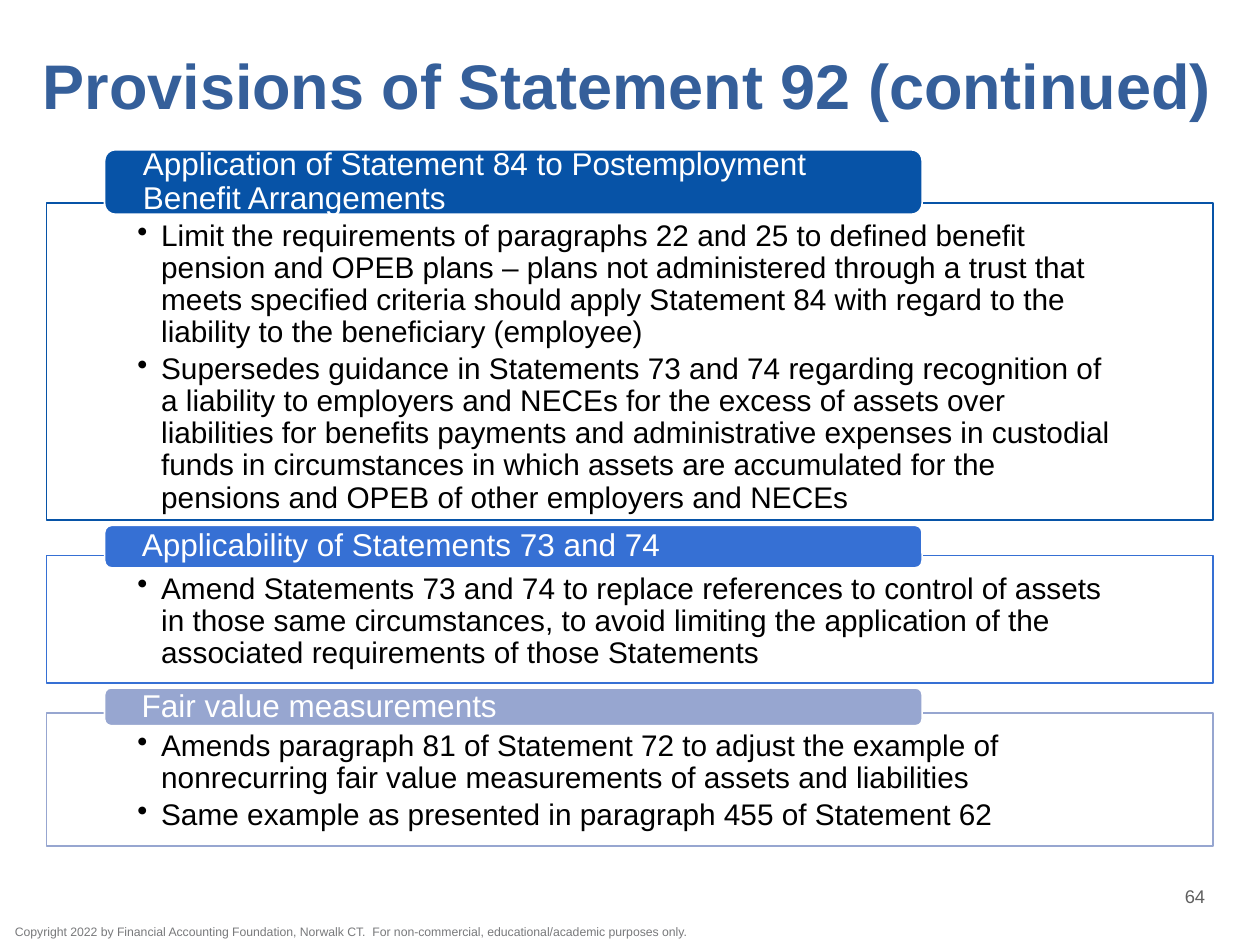
from dataclasses import dataclass

from lxml import etree
from pptx import Presentation
from pptx import util as u
from pptx.dml.color import RGBColor
from pptx.enum import shapes, text
from pptx.oxml import ns

FONT = "Arial"
WHITE = RGBColor(0xFF, 0xFF, 0xFF)
BLACK = RGBColor(0x00, 0x00, 0x00)
TITLE_BLUE = RGBColor(0x35, 0x5F, 0x9A)
DEEP_BLUE = RGBColor(0x07, 0x53, 0xA7)
MID_BLUE = RGBColor(0x36, 0x70, 0xD4)
PALE_BLUE = RGBColor(0x97, 0xA6, 0xD0)
NUMBER_GREY = RGBColor(0x5F, 0x5F, 0x5F)
COPYRIGHT_GREY = RGBColor(0x78, 0x79, 0x7B)

PANEL_LEFT, PANEL_WIDTH = 0.94, 23.52
HEADER_LEFT, HEADER_WIDTH = 2.11, 16.48


@dataclass
class Section:
    heading: str
    points: list[str]
    color: RGBColor
    header_top: float
    header_height: float
    panel_top: float
    panel_height: float


SECTIONS = [
    Section(
        "Application of Statement 84 to Postemployment Benefit Arrangements",
        [
            "Limit the requirements of paragraphs 22 and 25 to defined benefit pension "
            "and OPEB plans – plans not administered through a trust that meets specified "
            "criteria should apply Statement 84 with regard to the liability to the "
            "beneficiary (employee)",
            "Supersedes guidance in Statements 73 and 74 regarding recognition of a "
            "liability to employers and NECEs for the excess of assets over liabilities "
            "for benefits payments and administrative expenses in custodial funds in "
            "circumstances in which assets are accumulated for the pensions and OPEB of "
            "other employers and NECEs",
        ],
        DEEP_BLUE, 3.02, 1.3, 4.09, 6.4,
    ),
    Section(
        "Applicability of Statements 73 and 74",
        [
            "Amend Statements 73 and 74 to replace references to control of assets in "
            "those same circumstances, to avoid limiting the application of the "
            "associated requirements of those Statements",
        ],
        MID_BLUE, 10.59, 0.86, 11.2, 2.57,
    ),
    Section(
        "Fair value measurements",
        [
            "Amends paragraph 81 of Statement 72 to adjust the example of nonrecurring "
            "fair value measurements of assets and liabilities",
            "Same example as presented in paragraph 455 of Statement 62",
        ],
        PALE_BLUE, 13.87, 0.76, 14.38, 2.67,
    ),
]


def set_frame(frame, insets: tuple, anchor) -> None:
    frame.word_wrap = True
    frame.auto_size = text.MSO_AUTO_SIZE.NONE
    frame.vertical_anchor = anchor
    frame.margin_left, frame.margin_top, frame.margin_right, frame.margin_bottom = (
        u.Cm(inset) for inset in insets
    )


def style(para, size: float, color: RGBColor, align=text.PP_ALIGN.LEFT) -> None:
    para.alignment = align
    para.font.name = FONT
    para.font.size = u.Pt(size)
    para.font.color.rgb = color


def add_bullet(para) -> None:
    properties = para._p.get_or_add_pPr()
    properties.set("marL", str(u.Cm(0.48)))
    properties.set("indent", str(u.Cm(-0.48)))
    etree.SubElement(properties, ns.qn("a:buChar"), char="•")


def add_block(page, kind, left: float, top: float, width: float, height: float,
              fill: RGBColor, line: RGBColor):
    block = page.shapes.add_shape(kind, u.Cm(left), u.Cm(top), u.Cm(width), u.Cm(height))
    block.shadow.inherit = False
    block.fill.solid()
    block.fill.fore_color.rgb = fill
    block.line.color.rgb = line
    block.line.width = u.Pt(1)
    return block


def add_panel(page, section: Section) -> None:
    panel = add_block(page, shapes.MSO_SHAPE.RECTANGLE, PANEL_LEFT, section.panel_top,
                      PANEL_WIDTH, section.panel_height, WHITE, section.color)
    fill_color = panel._element.spPr.find(ns.qn("a:solidFill"))[0]
    etree.SubElement(fill_color, ns.qn("a:alpha"), val="90000")
    frame = panel.text_frame
    set_frame(frame, (1.83, 0.36, 1.83, 0.33), text.MSO_ANCHOR.TOP)
    for index, point in enumerate(section.points):
        para = frame.add_paragraph() if index else frame.paragraphs[0]
        para.text = point
        add_bullet(para)
        para.line_spacing = 0.9
        para.space_after = u.Pt(2.6)
        style(para, 17, BLACK)


def add_header(page, section: Section) -> None:
    header = add_block(page, shapes.MSO_SHAPE.ROUNDED_RECTANGLE, HEADER_LEFT,
                       section.header_top, HEADER_WIDTH, section.header_height,
                       section.color, WHITE)
    set_frame(header.text_frame, (0.71, 0, 0.71, 0), text.MSO_ANCHOR.MIDDLE)
    para = header.text_frame.paragraphs[0]
    para.text = section.heading
    para.line_spacing = 0.9
    style(para, 18, WHITE)


def add_label(page, words: str, left: float, top: float, width: float, height: float,
              size: float, color: RGBColor, anchor, align) -> None:
    box = page.shapes.add_textbox(u.Cm(left), u.Cm(top), u.Cm(width), u.Cm(height))
    set_frame(box.text_frame, (0, 0, 0, 0), anchor)
    para = box.text_frame.paragraphs[0]
    para.text = words
    style(para, size, color, align)


def set_title(page, words: str) -> None:
    title = page.shapes.title
    title.left, title.top = u.Cm(0.61), u.Cm(0.56)
    title.width, title.height = u.Cm(24.21), u.Cm(2.49)
    set_frame(title.text_frame, (0.25, 0, 0, 0), text.MSO_ANCHOR.MIDDLE)
    para = title.text_frame.paragraphs[0]
    para.text = words
    para.line_spacing = u.Pt(37)
    style(para, 36, TITLE_BLUE)
    para.font.bold = True


def main() -> None:
    deck = Presentation()
    deck.slide_width, deck.slide_height = u.Cm(25.4), u.Cm(19.05)
    page = deck.slides.add_slide(deck.slide_layouts[5])
    set_title(page, "Provisions of Statement 92 (continued)")
    for section in SECTIONS:
        add_panel(page, section)
        add_header(page, section)
    add_label(page, "64", 22.78, 17.65, 2.62, 0.84, 10.5, NUMBER_GREY,
              text.MSO_ANCHOR.MIDDLE, text.PP_ALIGN.CENTER)
    add_label(page, "Copyright 2022 by Financial Accounting Foundation, Norwalk CT.  "
              "For non-commercial, educational/academic purposes only.",
              0.3, 18.64, 13.79, 0.36, 7, COPYRIGHT_GREY,
              text.MSO_ANCHOR.TOP, text.PP_ALIGN.LEFT)
    deck.save("out.pptx")


if __name__ == "__main__":
    main()
